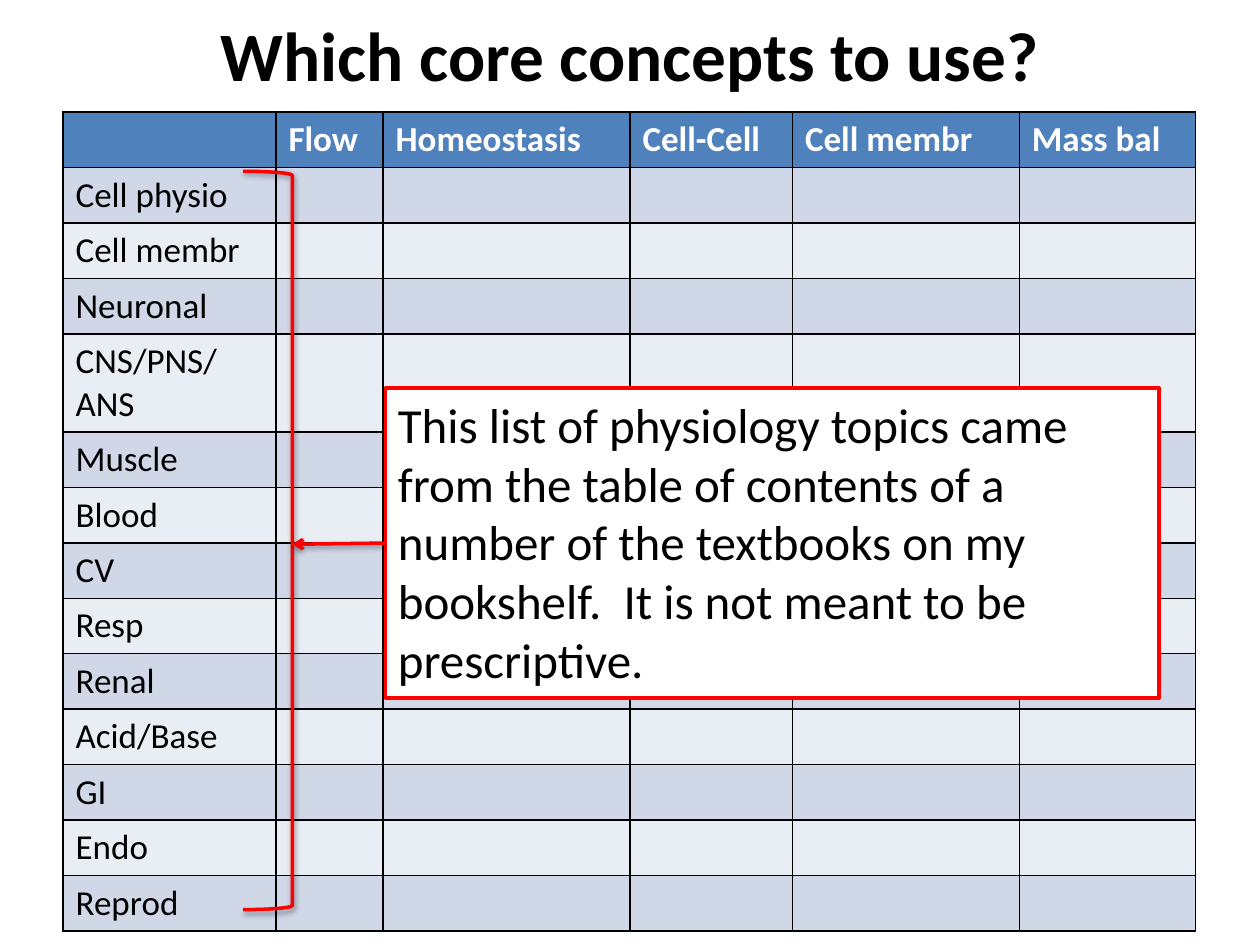
from lxml.etree import SubElement
from pptx import Presentation
from pptx.dml.color import RGBColor
from pptx.enum.shapes import MSO_CONNECTOR, MSO_SHAPE
from pptx.enum.text import MSO_ANCHOR, PP_ALIGN
from pptx.oxml.ns import qn
from pptx.util import Inches, Pt

BLACK = RGBColor(0x00, 0x00, 0x00)
WHITE = RGBColor(0xFF, 0xFF, 0xFF)
RED = RGBColor(0xFF, 0x00, 0x00)
HEADER_BLUE = RGBColor(0x4F, 0x81, 0xBD)
BANDS = [RGBColor(0xD0, 0xD8, 0xE8), RGBColor(0xE9, 0xED, 0xF4)]

CONCEPTS = ["Flow", "Homeostasis", "Cell-Cell", "Cell membr", "Mass bal"]
TOPICS = ["Cell physio", "Cell membr", "Neuronal", "CNS/PNS/ANS", "Muscle",
          "Blood", "CV", "Resp", "Renal", "Acid/Base", "GI", "Endo", "Reprod"]
COLUMN_WIDTHS = [1.69, 0.85, 1.96, 1.29, 1.8, 1.4]
ROW_HEIGHT = 0.44
TWO_LINE_HEIGHT = 0.78
NOTE = ("This list of physiology topics came from the table of contents of a "
        "number of the textbooks on my bookshelf.  It is not meant to be prescriptive.")


def write_text(frame, text, size, color=BLACK, bold=False, align=PP_ALIGN.LEFT):
    paragraph = frame.paragraphs[0]
    paragraph.alignment = align
    run = paragraph.add_run()
    run.text = text
    run.font.name = "Calibri"
    run.font.size = Pt(size)
    run.font.bold = bold
    run.font.color.rgb = color


def add_soft_shadow(shape):
    properties = shape._element.spPr
    effects = properties.find(qn("a:effectLst"))
    if effects is None:
        effects = SubElement(properties, qn("a:effectLst"))
    shadow = SubElement(effects, qn("a:outerShdw"), blurRad=str(Pt(3.1)),
                        dist=str(Pt(1.6)), dir="5400000", rotWithShape="0")
    color = SubElement(shadow, qn("a:srgbClr"), val=str(BLACK))
    SubElement(color, qn("a:alpha"), val="38000")


def set_red_line(shape, width):
    shape.line.color.rgb = RED
    shape.line.width = Pt(width)


def add_cell_borders(cell):
    """Draw thin black borders; they must precede the fill in the cell XML."""
    properties = cell._tc.get_or_add_tcPr()
    for side in ("lnL", "lnR", "lnT", "lnB"):
        border = SubElement(properties, qn(f"a:{side}"), w=str(Pt(1)))
        fill = SubElement(border, qn("a:solidFill"))
        SubElement(fill, qn("a:srgbClr"), val=str(BLACK))


def add_title(slide, left, top, width, height):
    box = slide.shapes.add_textbox(left, top, width, height)
    frame = box.text_frame
    frame.word_wrap = True
    frame.vertical_anchor = MSO_ANCHOR.MIDDLE
    write_text(frame, "Which core concepts to use?", 39.6, bold=True,
               align=PP_ALIGN.CENTER)


def add_concept_table(slide, left, top, width, height):
    rows = [["", *CONCEPTS]]
    rows += [[topic] + [""] * len(CONCEPTS) for topic in TOPICS]
    table = slide.shapes.add_table(len(rows), len(COLUMN_WIDTHS),
                                   left, top, width, height).table
    for column, column_width in zip(table.columns, COLUMN_WIDTHS):
        column.width = Inches(column_width)
    for row_index, texts in enumerate(rows):
        is_header = row_index == 0
        two_lines = texts[0] == "CNS/PNS/ANS"
        table.rows[row_index].height = Inches(TWO_LINE_HEIGHT if two_lines else ROW_HEIGHT)
        for column_index, text in enumerate(texts):
            cell = table.cell(row_index, column_index)
            add_cell_borders(cell)
            cell.fill.solid()
            cell.fill.fore_color.rgb = HEADER_BLUE if is_header else BANDS[(row_index - 1) % 2]
            if text:
                write_text(cell.text_frame, text, 20, bold=is_header,
                           color=WHITE if is_header else BLACK)


def add_note(slide, left, top, width, height):
    note = slide.shapes.add_shape(MSO_SHAPE.RECTANGLE, left, top, width, height)
    note.shadow.inherit = False
    note.fill.solid()
    note.fill.fore_color.rgb = WHITE
    set_red_line(note, 2.25)
    note.text_frame.word_wrap = True
    note.text_frame.vertical_anchor = MSO_ANCHOR.TOP
    write_text(note.text_frame, NOTE, 28)


def add_topic_bracket(slide, left, top, width, height):
    bracket = slide.shapes.add_shape(MSO_SHAPE.RIGHT_BRACKET, left, top, width, height)
    bracket.shadow.inherit = False
    bracket.fill.background()
    set_red_line(bracket, 2)
    add_soft_shadow(bracket)


def add_arrow(slide, start_x, start_y, end_x, end_y):
    arrow = slide.shapes.add_connector(MSO_CONNECTOR.STRAIGHT,
                                       start_x, start_y, end_x, end_y)
    set_red_line(arrow, 2)
    SubElement(arrow.line._get_or_add_ln(), qn("a:tailEnd"), type="arrow")
    add_soft_shadow(arrow)


def main():
    presentation = Presentation()
    presentation.slide_width = Inches(10)
    presentation.slide_height = Inches(7.5)
    slide = presentation.slides.add_slide(presentation.slide_layouts[6])
    add_title(slide, Inches(0.5), Inches(0.08), Inches(9), Inches(0.69))
    add_concept_table(slide, Inches(0.5), Inches(0.89), Inches(9), Inches(6.5))
    add_note(slide, Inches(3.06), Inches(3.08), Inches(6.14), Inches(2.46))
    add_topic_bracket(slide, Inches(1.93), Inches(1.36), Inches(0.39), Inches(5.86))
    add_arrow(slide, Inches(3.06), Inches(4.31), Inches(2.32), Inches(4.32))
    presentation.save("out.pptx")


if __name__ == "__main__":
    main()
